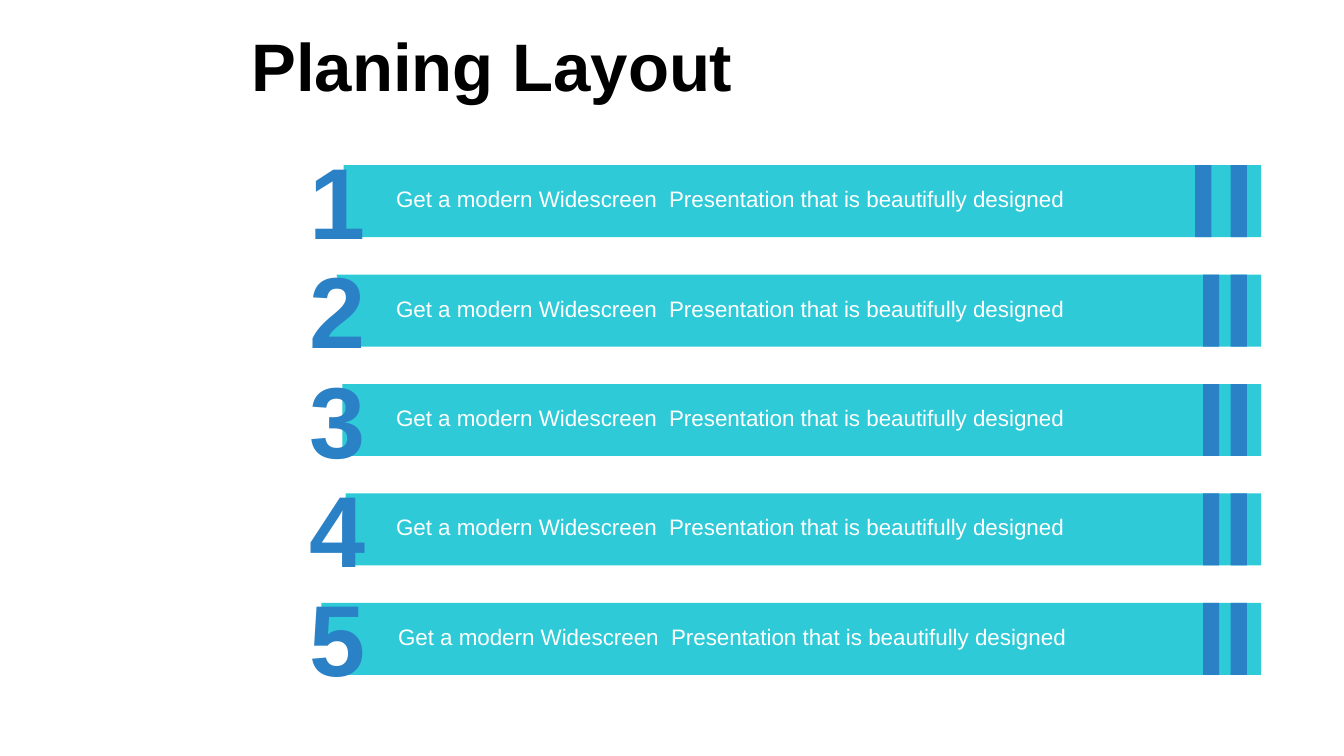
from dataclasses import dataclass

from pptx import Presentation
from pptx.dml.color import RGBColor
from pptx.enum.shapes import MSO_SHAPE
from pptx.enum.text import MSO_ANCHOR, MSO_AUTO_SIZE, PP_ALIGN
from pptx.util import Pt


@dataclass(frozen=True)
class Theme:
    bar: RGBColor = RGBColor(0x2E, 0xCA, 0xD7)
    accent: RGBColor = RGBColor(0x2A, 0x81, 0xC6)
    title: RGBColor = RGBColor(0, 0, 0)
    label: RGBColor = RGBColor(255, 255, 255)
    font: str = "Arial"
    title_size: int = 48
    number_size: int = 72
    label_size: int = 16


THEME = Theme()
LABEL = "Get a modern Widescreen  Presentation that is beautifully designed"

# Row grid
ROW_LEFT, ROW_TOP, ROW_WIDTH, ROW_HEIGHT, ROW_PITCH = 213.84, 118, 687, 51.4, 78.15
STRIPE_WIDTH, LAST_STRIPE, STRIPE_GAP = 11.5, 33.4, 8.3


def write(tf, text, size, color, bold=False, align=PP_ALIGN.LEFT,
          anchor=MSO_ANCHOR.TOP, inset=(7.2, 3.6)):
    tf.word_wrap = True
    tf.auto_size = MSO_AUTO_SIZE.NONE
    tf.vertical_anchor = anchor
    tf.margin_left = tf.margin_right = Pt(inset[0])
    tf.margin_top = tf.margin_bottom = Pt(inset[1])
    p = tf.paragraphs[0]
    p.alignment = align
    r = p.add_run()
    r.text = text
    r.font.name, r.font.size, r.font.bold = THEME.font, Pt(size), bold
    r.font.color.rgb = color


def paint(sp, color):
    sp.fill.solid()
    sp.fill.fore_color.rgb = color
    sp.line.fill.background()
    sp.shadow.inherit = False


def add_rect(s, x, y, w, h, color):
    paint(s.shapes.add_shape(MSO_SHAPE.RECTANGLE, Pt(x), Pt(y), Pt(w), Pt(h)), color)


def add_label(s, x, y, w, h, text, **fmt):
    write(s.shapes.add_textbox(Pt(x), Pt(y), Pt(w), Pt(h)).text_frame, text, **fmt)


def curve(a, b, c, d, steps=12):
    """Points along a cubic curve, both ends included."""
    ts = [i / steps for i in range(steps + 1)]
    return [tuple((1 - t) ** 3 * a[k] + 3 * (1 - t) ** 2 * t * b[k]
                  + 3 * (1 - t) * t ** 2 * c[k] + t ** 3 * d[k] for k in (0, 1))
            for t in ts]


# Left edges of the two bars cut around their number, from bottom to top
CUT_TWO = (curve((9.4, ROW_HEIGHT), (17.3, 42.5), (15.8, 31), (33.1, 25.2))
           + curve((33.1, 25.2), (49, 9.4), (26.6, 7.9), (26.6, 0)))
CUT_FIVE = (curve((30.2, ROW_HEIGHT), (36.7, 42.5), (37.4, 33.8), (30.2, 23))
            + [(15.8, 23), (15.8, 0)])

# Each row: left edge of the bar (offset or outline), stripe gap, label offset
ROWS = [
    (31.6, 13.9, 62),
    (CUT_TWO, STRIPE_GAP, 62),
    (30.8, STRIPE_GAP, 62),
    (33.1, STRIPE_GAP, 62),
    (CUT_FIVE, STRIPE_GAP, 63.4),
]


def add_title(s, x, y, w, h):
    sp = s.shapes.title
    sp.left, sp.top, sp.width, sp.height = Pt(x), Pt(y), Pt(w), Pt(h)
    write(sp.text_frame, "Planing Layout", size=THEME.title_size, color=THEME.title,
          bold=True, anchor=MSO_ANCHOR.MIDDLE, inset=(9.6, 4.8))


def add_bar(s, x, y, w, h, edge):
    if isinstance(edge, list):
        outline = [(w, 0), (w, h)] + edge
        points = [(Pt(x + dx), Pt(y + dy)) for dx, dy in outline]
        fb = s.shapes.build_freeform(*points[0])
        fb.add_line_segments(points[1:], close=True)
        paint(fb.convert_to_shape(), THEME.bar)
    else:
        add_rect(s, x + edge, y, w - edge, h, THEME.bar)


def add_row(s, x, y, w, h, number, edge, gap, label_dx):
    add_bar(s, x, y, w, h, edge)
    # Stripes at the right end
    last = x + w - 21.7
    for left in (last, last - gap - STRIPE_WIDTH):
        add_rect(s, left, y, STRIPE_WIDTH, h, THEME.accent)
    # Number and label
    add_label(s, x, y - 23, 47.5, 94.3, str(number), size=THEME.number_size,
              color=THEME.accent, bold=True, align=PP_ALIGN.CENTER,
              anchor=MSO_ANCHOR.MIDDLE)
    add_label(s, x + label_dx, y + 10.8, 525, 26.6, LABEL,
              size=THEME.label_size, color=THEME.label)


def main():
    prs = Presentation()
    prs.slide_width, prs.slide_height = Pt(960), Pt(540)
    s = prs.slides.add_slide(prs.slide_layouts[5])
    add_title(s, 170, 0, 790, 93)
    for i, (edge, gap, label_dx) in enumerate(ROWS):
        add_row(s, ROW_LEFT, ROW_TOP + i * ROW_PITCH, ROW_WIDTH, ROW_HEIGHT,
                i + 1, edge, gap, label_dx)
    prs.save("out.pptx")


if __name__ == "__main__":
    main()
